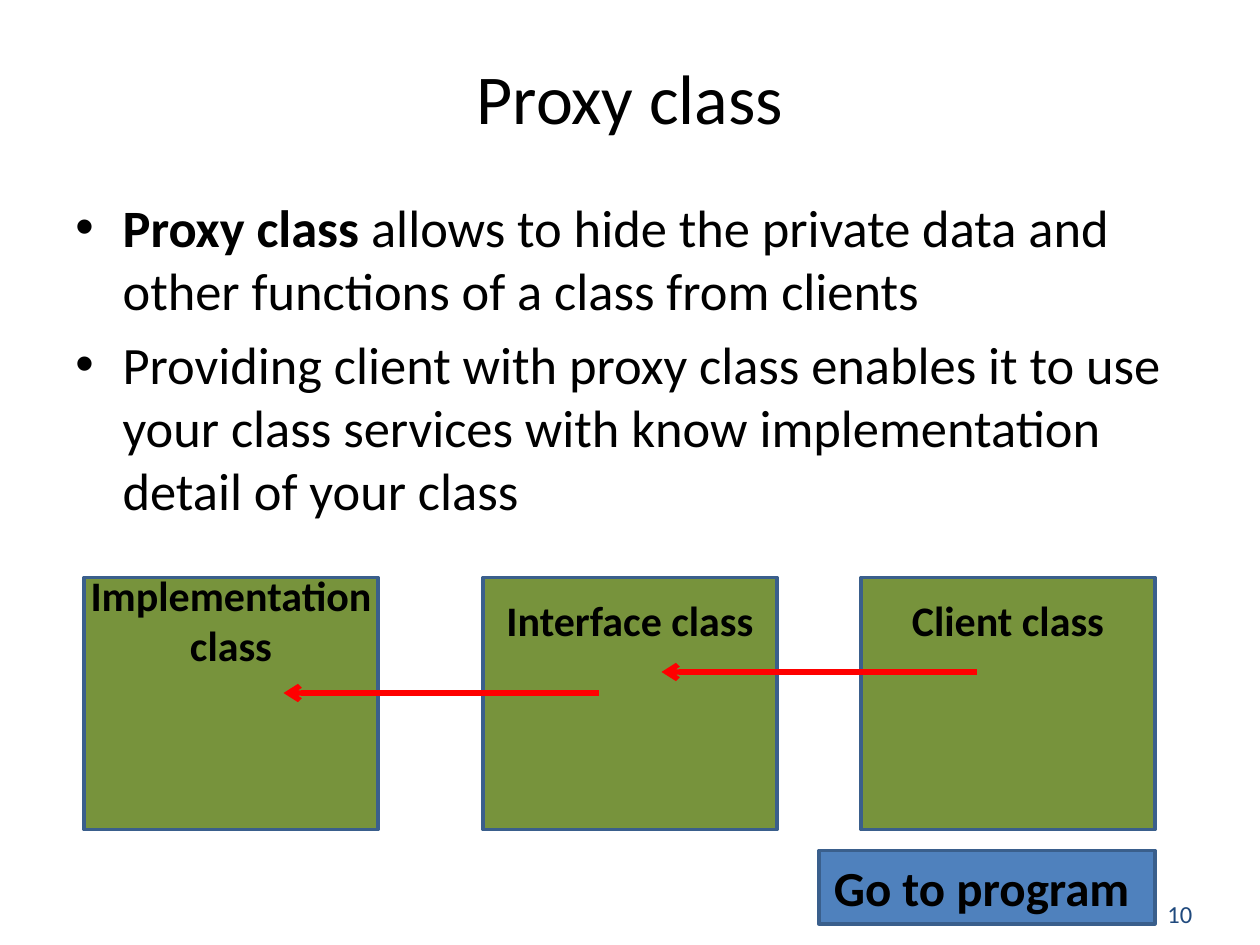
from lxml import etree
from pptx import Presentation
from pptx.dml.color import RGBColor
from pptx.enum.shapes import MSO_CONNECTOR, MSO_SHAPE
from pptx.enum.text import MSO_ANCHOR, PP_ALIGN
from pptx.oxml.ns import qn
from pptx.util import Pt

FONT = "Calibri"
BLACK = RGBColor(0x00, 0x00, 0x00)
NAVY = RGBColor(0x1F, 0x49, 0x7D)
BLUE = RGBColor(0x4F, 0x81, 0xBD)
EDGE = RGBColor(0x3A, 0x5F, 0x8C)
GREEN = RGBColor(0x77, 0x93, 0x3C)
RED = RGBColor(0xFF, 0x00, 0x00)

BULLETS = [
    [("Proxy class ", True),
     ("allows to hide the private data and other functions of a class from clients", False)],
    [("Providing client with proxy class enables it to use your class services "
      "with know implementation detail of your class", False)],
]
CLASSES = [("Implementation class", 48), ("Interface class", 276), ("Client class", 492)]
CLASS_TOP, CLASS_W, CLASS_H = 330, 168, 144
ARROWS = [(558, 384), (342, 396)]
ARROW_LENGTH = 180


def format_paragraph(p, size, color=BLACK, bold=False, align=PP_ALIGN.CENTER):
    p.alignment = align
    p.font.name = FONT
    p.font.size = Pt(size)
    p.font.bold = bold
    p.font.color.rgb = color


def set_text(sp, text, size, **style):
    tf = sp.text_frame
    tf.word_wrap = True
    tf.vertical_anchor = MSO_ANCHOR.MIDDLE
    tf.text = text
    format_paragraph(tf.paragraphs[0], size, **style)


def add_title(s, x, y, w, h):
    sp = s.shapes.title
    sp.left, sp.top, sp.width, sp.height = Pt(x), Pt(y), Pt(w), Pt(h)
    set_text(sp, "Proxy class", 40)


def add_bullets(s, x, y, w, h):
    tf = s.shapes.add_textbox(Pt(x), Pt(y), Pt(w), Pt(h)).text_frame
    tf.word_wrap = True
    for i, runs in enumerate(BULLETS):
        p = tf.add_paragraph() if i else tf.paragraphs[0]
        format_paragraph(p, 30, align=PP_ALIGN.LEFT)
        p.space_before = Pt(6)
        for text, bold in runs:
            r = p.add_run()
            r.text = text
            r.font.bold = bold
        pPr = p._p.get_or_add_pPr()
        pPr.set("marL", str(Pt(27)))
        pPr.set("indent", str(Pt(-27)))
        font, char = etree.Element(qn("a:buFont")), etree.Element(qn("a:buChar"))
        font.set("typeface", "Arial")
        char.set("char", "•")
        pPr.find(qn("a:defRPr")).addprevious(font)
        font.addnext(char)


def add_box(shapes, x, y, w, h, fill):
    sp = shapes.add_shape(MSO_SHAPE.RECTANGLE, Pt(x), Pt(y), Pt(w), Pt(h))
    sp.shadow.inherit = False
    sp.fill.solid()
    sp.fill.fore_color.rgb = fill
    sp.line.color.rgb = EDGE
    sp.line.width = Pt(2)
    return sp


def add_class(s, name, x, y, w, h):
    shapes = s.shapes.add_group_shape().shapes
    add_box(shapes, x, y, w, h, GREEN)
    label = shapes.add_textbox(Pt(x - 12), Pt(y + 6), Pt(w + 24), Pt(36))
    set_text(label, name, 24, bold=True)


def add_arrow(s, x, y, length):
    line = s.shapes.add_connector(MSO_CONNECTOR.STRAIGHT, Pt(x), Pt(y), Pt(x - length), Pt(y))
    line.line.color.rgb = RED
    line.line.width = Pt(3)
    etree.SubElement(line.line._get_or_add_ln(), qn("a:tailEnd")).set("type", "arrow")
    etree.SubElement(line._element.spPr, qn("a:effectLst"))


def add_button(s, x, y, w, h):
    set_text(add_box(s.shapes, x, y, w, h, BLUE), "Go to program ", 28, bold=True)


def add_page_number(s, x, y, w, h):
    sp = s.shapes.add_textbox(Pt(x), Pt(y), Pt(w), Pt(h))
    set_text(sp, "10", 14, color=NAVY, align=PP_ALIGN.LEFT)


def main():
    prs = Presentation()
    prs.slide_width, prs.slide_height = Pt(720), Pt(540)
    s = prs.slides.add_slide(prs.slide_layouts[5])
    add_page_number(s, 660, 510, 48, 24)
    add_title(s, 36, 27, 648, 56)
    add_bullets(s, 36, 108, 648, 204)
    for name, x in CLASSES:
        add_class(s, name, x, CLASS_TOP, CLASS_W, CLASS_H)
    for x, y in ARROWS:
        add_arrow(s, x, y, ARROW_LENGTH)
    add_button(s, 468, 486, 192, 42)
    prs.save("out.pptx")


if __name__ == "__main__":
    main()
